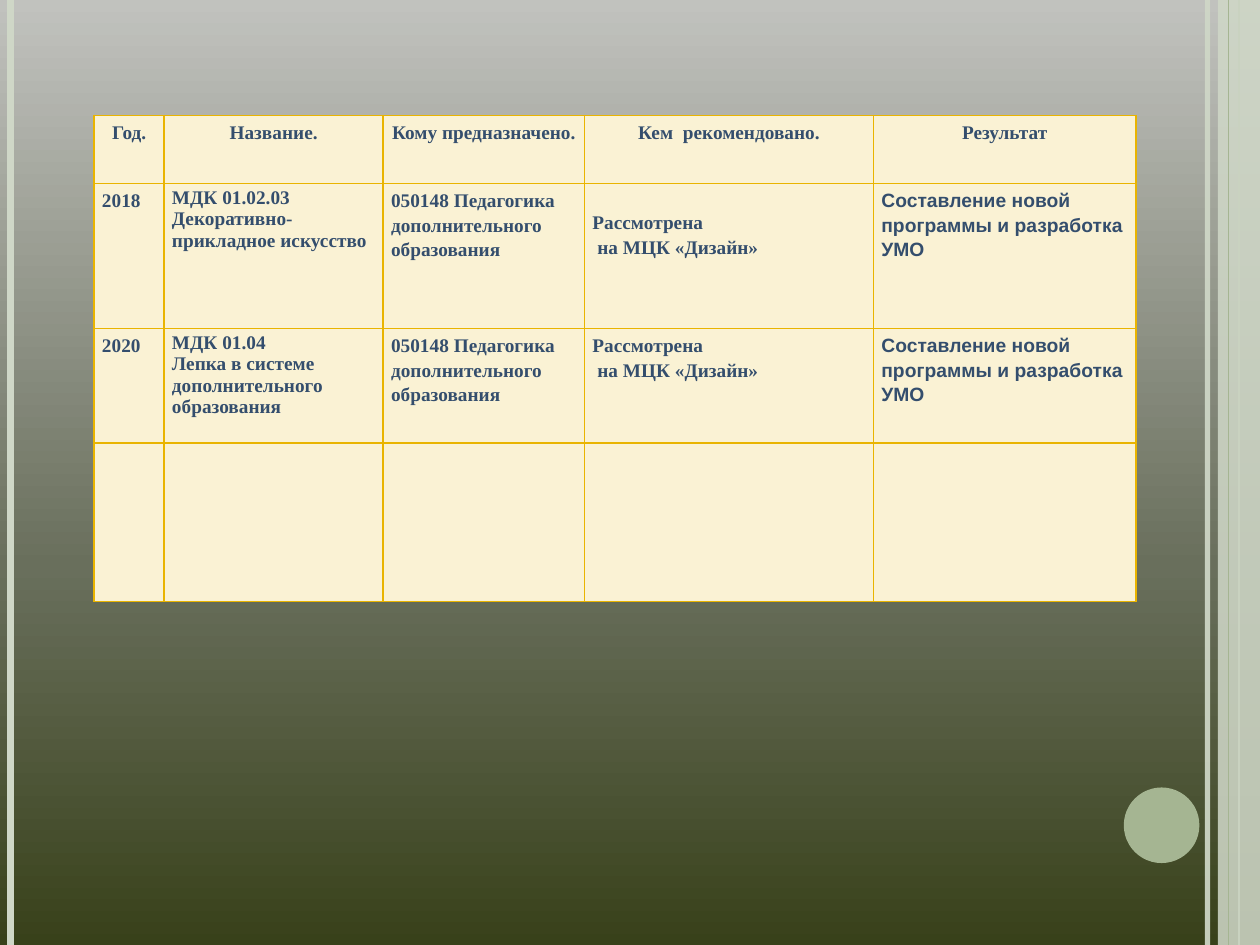
import pptx
import pptx.util
import pptx.dml.color
import pptx.enum.shapes
import pptx.enum.text
import pptx.oxml
import pptx.oxml.ns
import copy

Pt = pptx.util.Pt
Align = pptx.enum.text.PP_ALIGN
COLORS = {
    "dark": "38411A", "middle": "696F5C", "light": "C1C2BE",
    "pale": "CFD7C7", "green": "A5B592",
    "cell": "FAF2D4", "border": "E9B400", "text": "344E6D",
}


class SlideBuilder:
    serif = "Times New Roman"
    sans = "Arial"
    text_size = 11

    def __init__(self, slide):
        self.slide = slide

    def rgb(self, name):
        return pptx.dml.color.RGBColor.from_string(COLORS[name])

    def element(self, parent, tag, **values):
        child = pptx.oxml.parse_xml(f"<a:{tag} {pptx.oxml.ns.nsdecls('a')}/>")
        for key, value in values.items():
            child.set(key, str(value))
        parent.append(child)
        return child

    def fade(self, fill_parent, percent):
        color = fill_parent.find(".//" + pptx.oxml.ns.qn("a:srgbClr"))
        self.element(color, "alpha", val=percent * 1000)

    def background(self, stops, angle):
        fill = self.slide.background.fill
        fill.gradient()
        fill.gradient_angle = angle
        stop_list = fill._fill._gradFill.gsLst
        stop_list.insert(1, copy.deepcopy(stop_list[0]))
        for stop, (position, color) in zip(fill.gradient_stops, stops):
            stop.position = position
            stop.color.rgb = self.rgb(color)

    def vertical_line(self, x, width, color, opacity=None):
        line = self.slide.shapes.add_connector(
            pptx.enum.shapes.MSO_CONNECTOR.STRAIGHT, Pt(x), Pt(0), Pt(x), Pt(540))
        line.line.width = Pt(width)
        line.line.color.rgb = self.rgb(color)
        if opacity:
            self.fade(line.line._ln, opacity)
        self.element(line._element.spPr, "effectLst")

    def shape(self, kind, box, color, opacity=None):
        shape = self.slide.shapes.add_shape(kind, *map(Pt, box))
        shape.shadow.inherit = False
        shape.fill.solid()
        shape.fill.fore_color.rgb = self.rgb(color)
        shape.line.fill.background()
        if opacity:
            self.fade(shape._element.spPr, opacity)

    def borders(self, cell):
        properties = cell._tc.get_or_add_tcPr()
        for side in ("lnL", "lnR", "lnT", "lnB"):
            line = self.element(properties, side, w=Pt(1))
            fill = self.element(line, "solidFill")
            self.element(fill, "srgbClr", val=COLORS["border"])

    def cell(self, cell, lines, align, spacing, font, top=2.16, indent=0):
        margins = {"margin_left": 4.5, "margin_right": 4.5,
                   "margin_top": top, "margin_bottom": 2.16}
        for name, value in margins.items():
            setattr(cell, name, Pt(value))
        self.borders(cell)
        cell.fill.solid()
        cell.fill.fore_color.rgb = self.rgb("cell")
        cell.text = "\n".join(lines)
        values = {"name": font, "size": Pt(self.text_size), "bold": True}
        for index, paragraph in enumerate(cell.text_frame.paragraphs):
            paragraph.alignment = align
            paragraph.line_spacing = spacing
            if index and indent:
                paragraph._p.get_or_add_pPr().set("marL", str(Pt(indent)))
            for target in [paragraph.font] + [run.font for run in paragraph.runs]:
                for name, value in values.items():
                    setattr(target, name, value)
                target.color.rgb = self.rgb("text")

    def table(self, left, top, widths, heights, rows):
        table = self.slide.shapes.add_table(
            len(heights), len(widths), Pt(left), Pt(top),
            Pt(sum(widths)), Pt(sum(heights))).table
        table.first_row = table.horz_banding = False
        for column, width in zip(table.columns, widths):
            column.width = Pt(width)
        for row, height in zip(table.rows, heights):
            row.height = Pt(height)
        for r, row in enumerate(rows):
            for c, lines in enumerate(row):
                body = r > 0
                options = {
                    "align": Align.LEFT if body else Align.CENTER,
                    "spacing": 1.0 if body and c == 1 else 1.15,
                    "font": self.sans if body and c == 4 else self.serif,
                }
                if body and c == 3:
                    options["indent"] = 2.75
                    # The first recommendation starts one line lower
                    options["top"] = 14.8 if r == 1 else 2.16
                self.cell(table.cell(r, c), lines, **options)


def main():
    presentation = pptx.Presentation()
    presentation.slide_width, presentation.slide_height = Pt(720), Pt(540)
    builder = SlideBuilder(presentation.slides.add_slide(presentation.slide_layouts[6]))

    # Background and side decoration
    shapes = pptx.enum.shapes.MSO_SHAPE
    builder.background([(0, "dark"), (0.4, "middle"), (1, "light")], 90)
    builder.vertical_line(690, 3, "pale", 93)
    builder.vertical_line(6, 4.5, "pale")
    builder.vertical_line(708, 1.5, "green")
    builder.shape(shapes.RECTANGLE, (696, 0, 24, 540), "pale", 87)
    builder.vertical_line(702, 0.75, "green")
    builder.shape(shapes.OVAL, (642.2, 450, 43.2, 43.2), "green")

    # Programme table
    audience = ["050148 Педагогика дополнительного образования"]
    reviewed = ["Рассмотрена", "на МЦК «Дизайн»"]
    result = ["Составление новой программы и разработка УМО"]
    header = ["Год.", "Название.", "Кому предназначено.",
              "Кем  рекомендовано.", "Результат"]
    rows = [
        [[title] for title in header],
        [["2018"], ["МДК 01.02.03 Декоративно-прикладное искусство"],
         audience, reviewed, result],
        [["2020"], ["МДК 01.04", "Лепка в системе дополнительного образования"],
         audience, reviewed, result],
        [[]] * len(header),
    ]
    builder.table(53.8, 66, [40, 125.2, 115.1, 165.1, 150],
                  [38.8, 82.8, 65.6, 90.5], rows)

    presentation.save("out.pptx")


if __name__ == "__main__":
    main()
